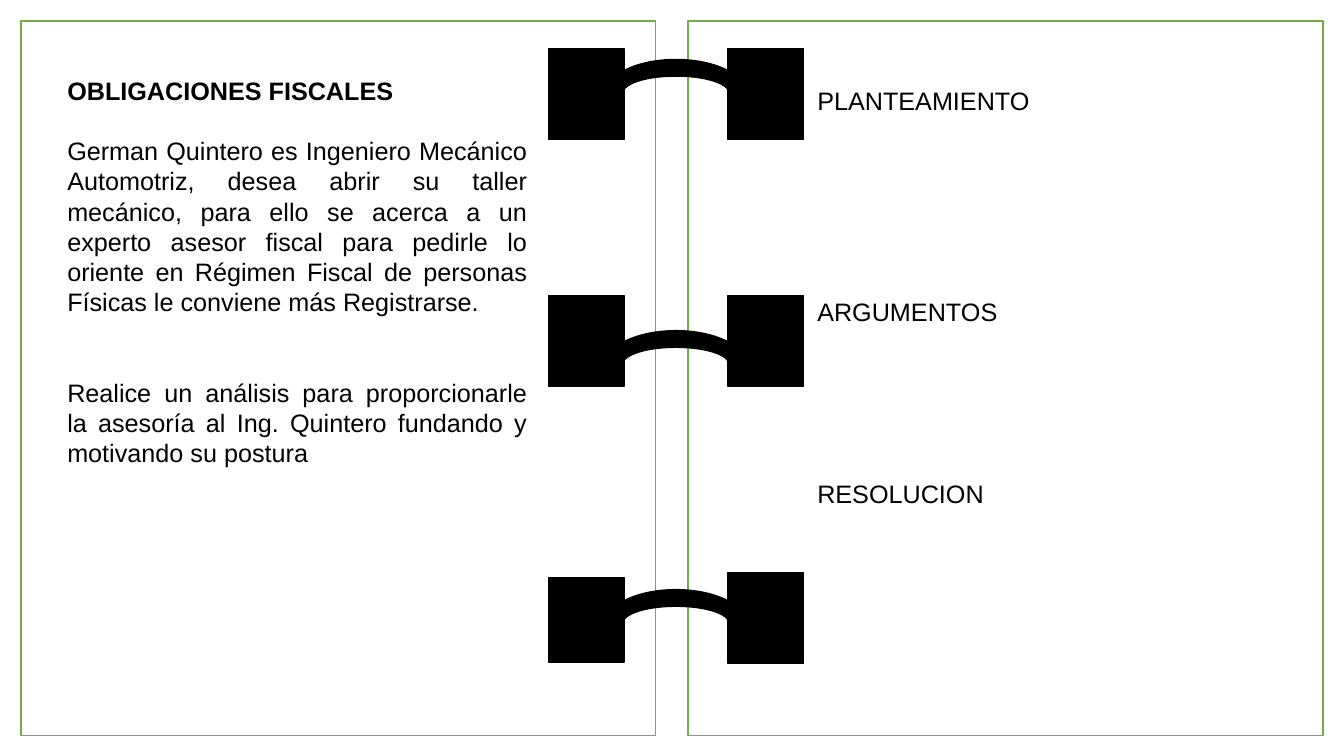
from dataclasses import dataclass

from pptx import Presentation
from pptx.dml.color import RGBColor
from pptx.enum.shapes import MSO_SHAPE
from pptx.enum.text import MSO_ANCHOR, PP_ALIGN
from pptx.util import Pt


@dataclass(frozen=True)
class Theme:
    paper: RGBColor = RGBColor(0xFF, 0xFF, 0xFF)
    edge: RGBColor = RGBColor(0x70, 0xAD, 0x47)
    ink: RGBColor = RGBColor(0, 0, 0)
    font: str = "Arial"
    size: float = 18
    pitch: float = 21.6
    line: float = 1


THEME = Theme()

# Each entry: blank lines above, wording, bold
CASE = [
    (0, "OBLIGACIONES FISCALES ", True),
    (1, "German Quintero es Ingeniero Mecánico Automotriz, desea abrir su "
        "taller mecánico, para ello se acerca a un experto asesor fiscal para "
        "pedirle lo oriente en Régimen Fiscal de personas Físicas le conviene "
        "más Registrarse.", False),
    (2, "Realice un análisis para proporcionarle la asesoría al Ing. Quintero "
        "fundando y motivando su postura ", False),
]
TASKS = [
    (0, "PLANTEAMIENTO", False),
    (6, "ARGUMENTOS ", False),
    (5, "RESOLUCION ", False),
]

# Each ring: top and height of the left tab, the right tab and the arc
RINGS = [
    ((34.5, 65), (34.5, 65), (42.5, 47.5)),
    ((211, 65), (211, 65), (236.2, 47.5)),
    ((412.5, 60.5), (409, 65), (421.2, 47.5)),
]


def place(slide, kind, box, fill, edge):
    """Add one filled, outlined shape."""
    shape = slide.shapes.add_shape(kind, *map(Pt, box))
    shape.shadow.inherit = False
    shape.fill.solid()
    shape.fill.fore_color.rgb = fill
    shape.line.color.rgb = edge
    shape.line.width = Pt(THEME.line)


def add_pages(slide, box):
    """Two facing sheets with a gutter between them."""
    left, top, width, height = box
    gap = 23
    sheet = (width - gap) / 2
    for x in (left, left + sheet + gap):
        place(slide, MSO_SHAPE.RECTANGLE, (x, top, sheet, height),
              THEME.paper, THEME.edge)


def add_rings(slide, box):
    """Binder rings: pairs of tabs, then the arcs that join them."""
    left, top, width, _ = box
    tab, arc = 54, 99.4
    spots = (left, left + width - tab)
    for ring in RINGS:
        for x, (y, height) in zip(spots, ring):
            place(slide, MSO_SHAPE.RECTANGLE, (x, top + y, tab, height),
                  THEME.ink, THEME.ink)
    for *_, (y, height) in RINGS:
        place(slide, MSO_SHAPE.BLOCK_ARC,
              (left + (width - arc) / 2, top + y, arc, height),
              THEME.ink, THEME.ink)


def add_notes(slide, box, items, skip=0):
    """Justified text, starting a number of lines below the box top."""
    frame = slide.shapes.add_textbox(*map(Pt, box)).text_frame
    frame.word_wrap = True
    frame.vertical_anchor = MSO_ANCHOR.TOP
    frame.margin_top = Pt(4.5 + skip * THEME.pitch)
    for index, (gap, words, bold) in enumerate(items):
        para = frame.add_paragraph() if index else frame.paragraphs[0]
        para.text = words
        para.alignment = PP_ALIGN.JUSTIFY
        para.line_spacing = Pt(THEME.pitch)
        para.space_before = Pt(gap * THEME.pitch)
        font = para.runs[0].font
        font.name = THEME.font
        font.size = Pt(THEME.size)
        font.bold = bold
        font.color.rgb = THEME.ink


def main():
    deck = Presentation()
    deck.slide_width, deck.slide_height = Pt(960), Pt(540)
    slide = deck.slides.add_slide(deck.slide_layouts[6])

    add_pages(slide, (15, 15, 930, 510.5))
    add_rings(slide, (391.7, 0, 182.2, 540))
    add_notes(slide, (41, 49, 342.7, 312.5), CASE)
    add_notes(slide, (576.7, 34.5, 342.7, 450.7), TASKS, skip=1)

    deck.save("out.pptx")


if __name__ == "__main__":
    main()
